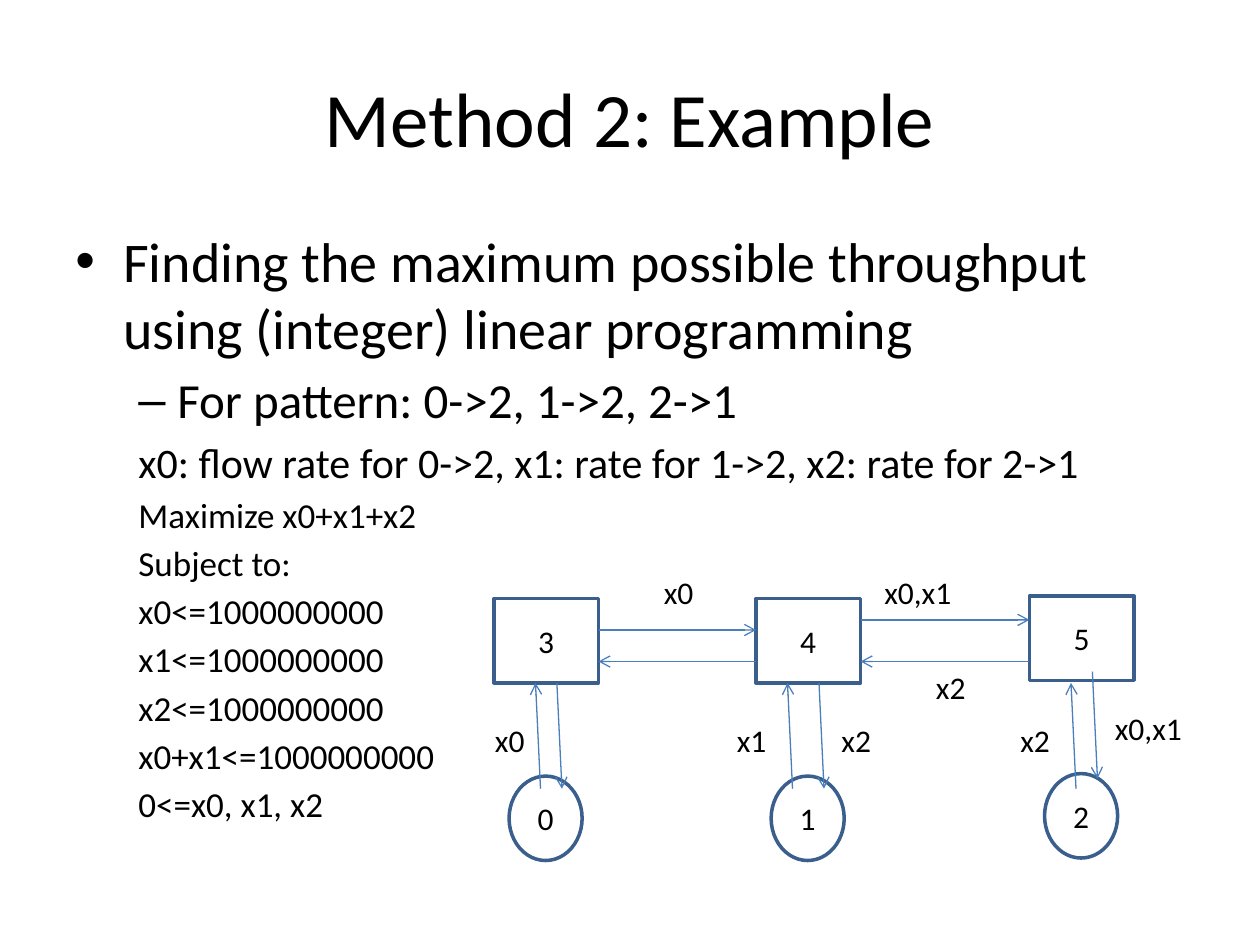
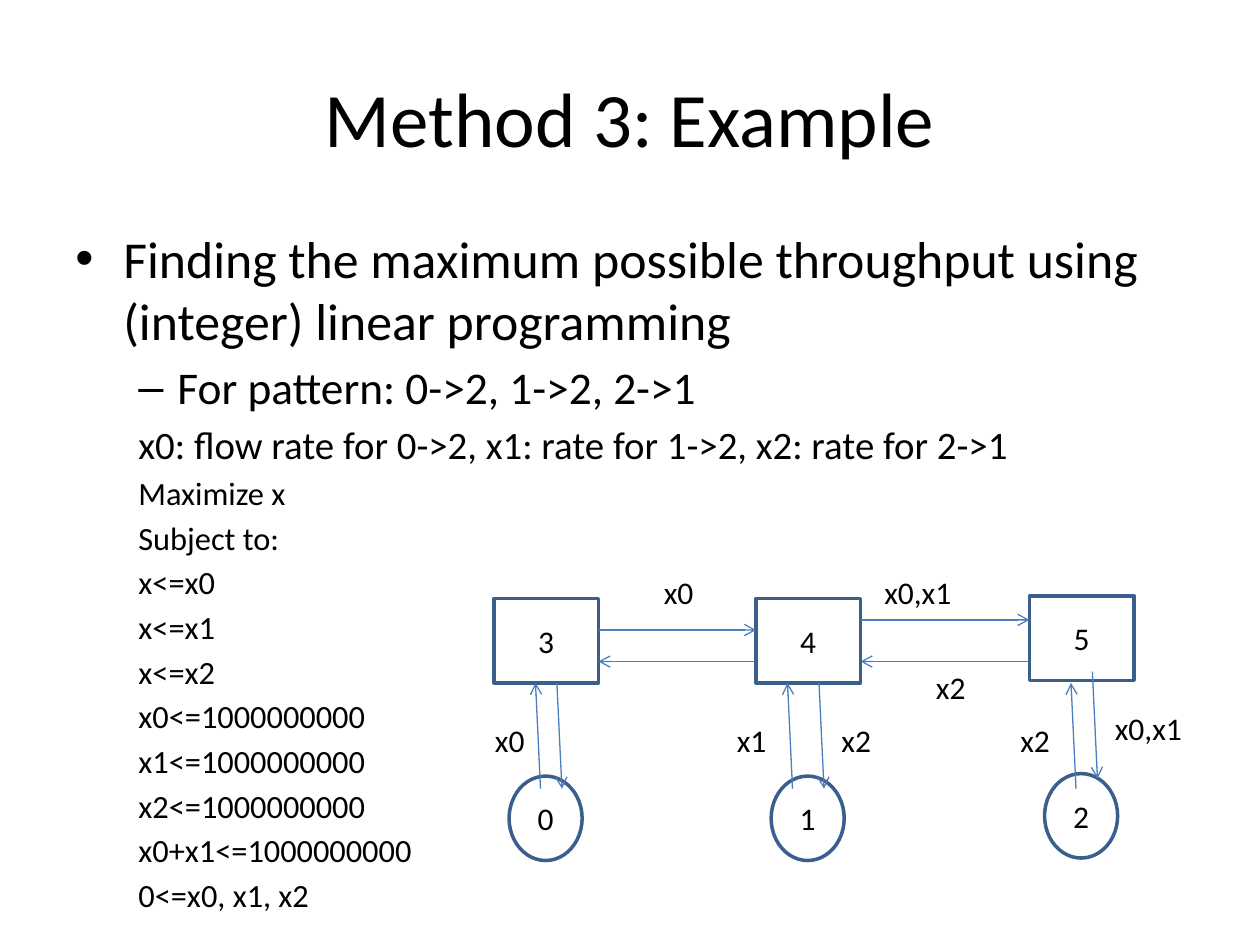
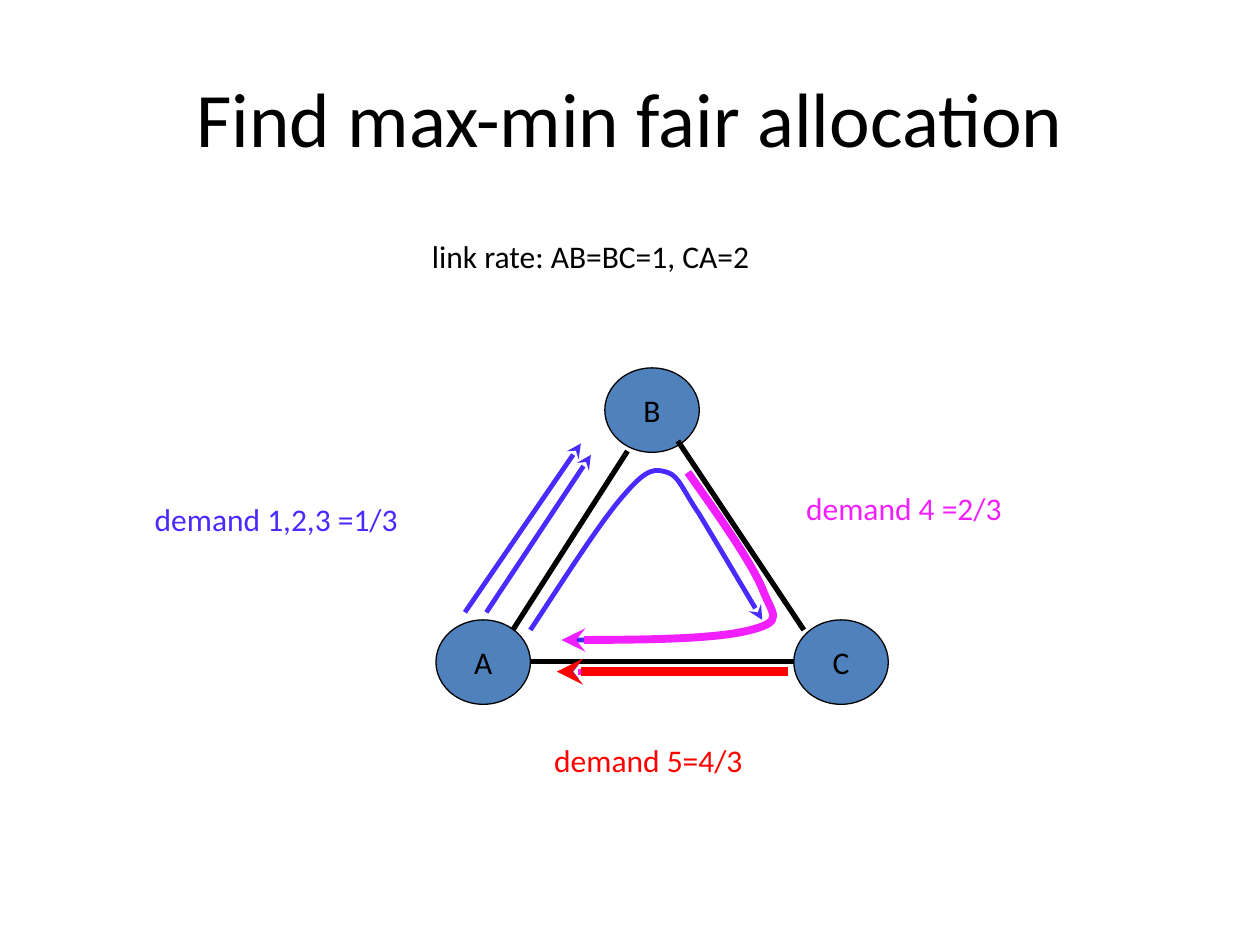
from lxml import etree
from pptx import Presentation
from pptx.dml.color import RGBColor
from pptx.enum.shapes import MSO_CONNECTOR, MSO_SHAPE
from pptx.enum.text import MSO_ANCHOR, MSO_AUTO_SIZE, PP_ALIGN
from pptx.oxml.ns import qn
from pptx.util import Inches, Pt

FONT = "Calibri"
BLACK = "000000"
NODE_OUTLINE = "3A5F8C"
LINK_BLUE = "4B7EBC"
NODE_FILL = "4F81BD"
VIOLET = "492BFF"
MAGENTA = "F21FFF"
RED = "FF0000"

SWITCH_COLUMNS = [(3.92, 4.75, "3", "0"), (6, 4.75, "4", "1"), (8.17, 4.73, "5", "2")]
SWITCH_LINKS = [
    ((4.75, 5), (6, 5)),
    ((6, 5.25), (4.75, 5.25)),
    ((6.83, 4.92), (8.17, 4.92)),
    ((8.17, 5.25), (6.83, 5.25)),
    ((4.29, 6.26), (4.25, 5.42)),
    ((4.42, 5.42), (4.46, 6.26)),
    ((6.29, 6.26), (6.25, 5.42)),
    ((6.5, 5.42), (6.54, 6.26)),
    ((8.54, 6.26), (8.5, 5.42)),
    ((8.67, 5.33), (8.71, 6.18)),
]
FLOW_LABELS = [
    ("x0", 3.83, 5.67, 0.44),
    ("x0", 5.17, 4.5, 0.44),
    ("x0,x1", 6.92, 4.5, 0.74),
    ("x0,x1", 8.75, 5.58, 0.74),
    ("x1", 5.75, 5.67, 0.44),
    ("x2", 8, 5.67, 0.44),
    ("x2", 7.33, 5.25, 0.44),
    ("x2", 6.58, 5.67, 0.44),
]
CAPACITY_LIMITS = [
    "x0<=1000000000",
    "x1<=1000000000",
    "x2<=1000000000",
    "x0+x1<=1000000000",
    "0<=x0, x1, x2",
]
ROUTE_A_TO_C = [
    (4.21, 5), (4.5, 4.56), (4.78, 4.12), (4.96, 3.92),
    (5.14, 3.71), (5.2, 3.72), (5.3, 3.75),
    (5.39, 3.78), (5.42, 3.89), (5.55, 4.08),
    (5.67, 4.28), (5.86, 4.6), (6.05, 4.92),
]
ROUTE_B_TO_A = [
    (5.46, 3.75), (5.71, 4.1), (5.96, 4.46), (6.05, 4.67),
    (6.13, 4.88), (6.23, 4.93), (5.96, 5),
    (5.7, 5.07), (5.08, 5.08), (4.46, 5.08),
]


def color(value):
    """Turn a hex string into a colour."""
    return RGBColor.from_string(value)


def add_span(para, text, size, ink=BLACK):
    """Add one formatted run to a paragraph."""
    span = para.add_run()
    span.text = text
    span.font.name = FONT
    span.font.size = Pt(size)
    span.font.color.rgb = color(ink)


def add_page(deck, title):
    """Add a title-only slide with the shared title style."""
    page = deck.slides.add_slide(deck.slide_layouts[5])
    box = page.shapes.title
    box.left, box.top, box.width, box.height = map(Inches, (0.5, 0.3, 9, 1.25))
    box.text_frame.vertical_anchor = MSO_ANCHOR.MIDDLE
    para = box.text_frame.paragraphs[0]
    para.alignment = PP_ALIGN.CENTER
    add_span(para, title, 44)
    return page


def add_label(page, text, left, top, width, height=0.4, ink=BLACK):
    """Add a one-line text box."""
    box = page.shapes.add_textbox(*map(Inches, (left, top, width, height)))
    box.text_frame.word_wrap = False
    box.text_frame.auto_size = MSO_AUTO_SIZE.SHAPE_TO_FIT_TEXT
    add_span(box.text_frame.paragraphs[0], text, 18, ink)


def add_node(page, kind, text, place, outline, weight, fill=None):
    """Add an outlined network node with a centred name."""
    node = page.shapes.add_shape(kind, *map(Inches, place))
    node.shadow.inherit = False
    if fill:
        node.fill.solid()
        node.fill.fore_color.rgb = color(fill)
    else:
        node.fill.background()
    node.line.color.rgb = color(outline)
    node.line.width = Pt(weight)
    node.text_frame.word_wrap = False
    node.text_frame.vertical_anchor = MSO_ANCHOR.MIDDLE
    para = node.text_frame.paragraphs[0]
    para.alignment = PP_ALIGN.CENTER
    add_span(para, text, 18)


def style_line(line, ink, weight, arrowhead=None):
    """Set colour, width and end arrowhead of a line."""
    line.color.rgb = color(ink)
    line.width = Pt(weight)
    if arrowhead:
        outline = line._get_or_add_ln()
        etree.SubElement(outline, qn("a:tailEnd"), type=arrowhead)


def add_link(page, start, end, ink, weight, arrowhead=None):
    """Add a straight link between two points."""
    link = page.shapes.add_connector(
        MSO_CONNECTOR.STRAIGHT, *map(Inches, (*start, *end)))
    style_line(link.line, ink, weight, arrowhead)
    etree.SubElement(link.element.spPr, qn("a:effectLst"))


def add_route(page, points, ink, weight):
    """Add a curved arrow through cubic control points."""
    start, *controls = [(Inches(x), Inches(y)) for x, y in points]
    builder = page.shapes.build_freeform(*start)
    builder.add_line_segments(controls, close=False)
    route = builder.convert_to_shape()
    route.shadow.inherit = False
    route.fill.background()
    style_line(route.line, ink, weight, "stealth")
    outline = route.element.find(".//" + qn("a:path"))
    segments = outline.findall(qn("a:lnTo"))
    for first in range(0, len(segments), 3):
        curve = etree.SubElement(outline, qn("a:cubicBezTo"))
        for segment in segments[first:first + 3]:
            curve.append(segment[0])
            outline.remove(segment)


def set_bullet(para, margin, hanging, mark):
    """Set the hanging indent and optional bullet of a paragraph."""
    properties = para._p.get_or_add_pPr()
    properties.set("marL", str(Inches(margin)))
    properties.set("indent", str(-Inches(hanging)))
    if mark:
        etree.SubElement(properties, qn("a:buFont"), typeface="Arial")
        etree.SubElement(properties, qn("a:buChar"), char=mark)
    else:
        etree.SubElement(properties, qn("a:buNone"))


def add_program(page, objective, constraints, scale=1):
    """Add the linear program as a bulleted text."""
    rows = [
        ("Finding the maximum possible throughput using (integer) linear programming",
         32, "•"),
        ("For pattern: 0->2, 1->2, 2->1", 28, "–"),
        ("x0: flow rate for 0->2, x1: rate for 1->2, x2: rate for 2->1", 24, None),
    ]
    rows += [(text, 20, None) for text in [objective, "Subject to:", *constraints]]
    box = page.shapes.add_textbox(*map(Inches, (0.5, 1.75, 9.25, 5)))
    frame = box.text_frame
    frame.word_wrap = True
    for index, (text, size, mark) in enumerate(rows):
        para = frame.add_paragraph() if index else frame.paragraphs[0]
        if index:
            para.level = 1
            set_bullet(para, 0.81, 0.31, mark)
            para.space_before = Pt(size * scale * 0.18)
        else:
            set_bullet(para, 0.38, 0.38, mark)
        add_span(para, text, round(size * scale, 1))


def add_switch_network(page):
    """Draw three switches, their hosts and the flows between them."""
    for left, top, switch, host in SWITCH_COLUMNS:
        add_node(page, MSO_SHAPE.RECTANGLE, switch,
                 (left, top, 0.83, 0.67), NODE_OUTLINE, 2)
        add_node(page, MSO_SHAPE.OVAL, host,
                 (left + 0.12, top + 1.41, 0.58, 0.67), NODE_OUTLINE, 2)
    for start, end in SWITCH_LINKS:
        add_link(page, start, end, LINK_BLUE, 0.75, "arrow")
    for label in FLOW_LABELS:
        add_label(page, *label)


def add_triangle_network(page):
    """Draw the triangle of nodes and the routed demands."""
    for name, left, top in [("B", 4.8, 2.92), ("C", 6.3, 4.92), ("A", 3.46, 4.92)]:
        add_node(page, MSO_SHAPE.OVAL, name, (left, top, 0.75, 0.67),
                 BLACK, 0.75, NODE_FILL)
    for start, end in [((4.07, 5), (4.98, 3.58)), ((5.38, 3.5), (6.38, 5)),
                       ((4.21, 5.25), (6.3, 5.25))]:
        add_link(page, start, end, BLACK, 3)
    for start, end in [((6.14, 5.33), (4.48, 5.33)), ((3.69, 4.86), (4.61, 3.52)),
                       ((3.86, 4.86), (4.69, 3.61))]:
        add_link(page, start, end, VIOLET, 2.75, "stealth")
    add_route(page, ROUTE_A_TO_C, VIOLET, 2.75)
    add_route(page, ROUTE_B_TO_A, VIOLET, 2.75)
    add_route(page, ROUTE_B_TO_A, MAGENTA, 4.5)
    add_link(page, (6.25, 5.33), (4.45, 5.33), MAGENTA, 3.5, "stealth")
    add_link(page, (6.25, 5.33), (4.42, 5.33), RED, 5, "stealth")
    add_label(page, "link rate: AB=BC=1, CA=2", 3.33, 1.83, 3.91, 0.5)
    add_label(page, "demand 1,2,3 =1/3", 1.13, 3.92, 2.7, 0.5, VIOLET)
    add_label(page, "demand 4 =2/3", 6.3, 3.83, 2.2, 0.5, MAGENTA)
    add_label(page, "demand 5=4/3", 4.3, 5.83, 2.12, 0.5, RED)


def main():
    """Build and save the deck."""
    deck = Presentation()
    deck.slide_width, deck.slide_height = Inches(10), Inches(7.5)

    page = add_page(deck, "Method 2: Example")
    add_program(page, "Maximize x0+x1+x2", CAPACITY_LIMITS)
    add_switch_network(page)

    page = add_page(deck, "Method 3: Example")
    fairness_limits = ["x<=x0", "x<=x1", "x<=x2"]
    add_program(page, "Maximize x", fairness_limits + CAPACITY_LIMITS, 0.925)
    add_switch_network(page)

    page = add_page(deck, "Find max-min fair allocation")
    add_triangle_network(page)

    deck.save("out.pptx")


if __name__ == "__main__":
    main()
